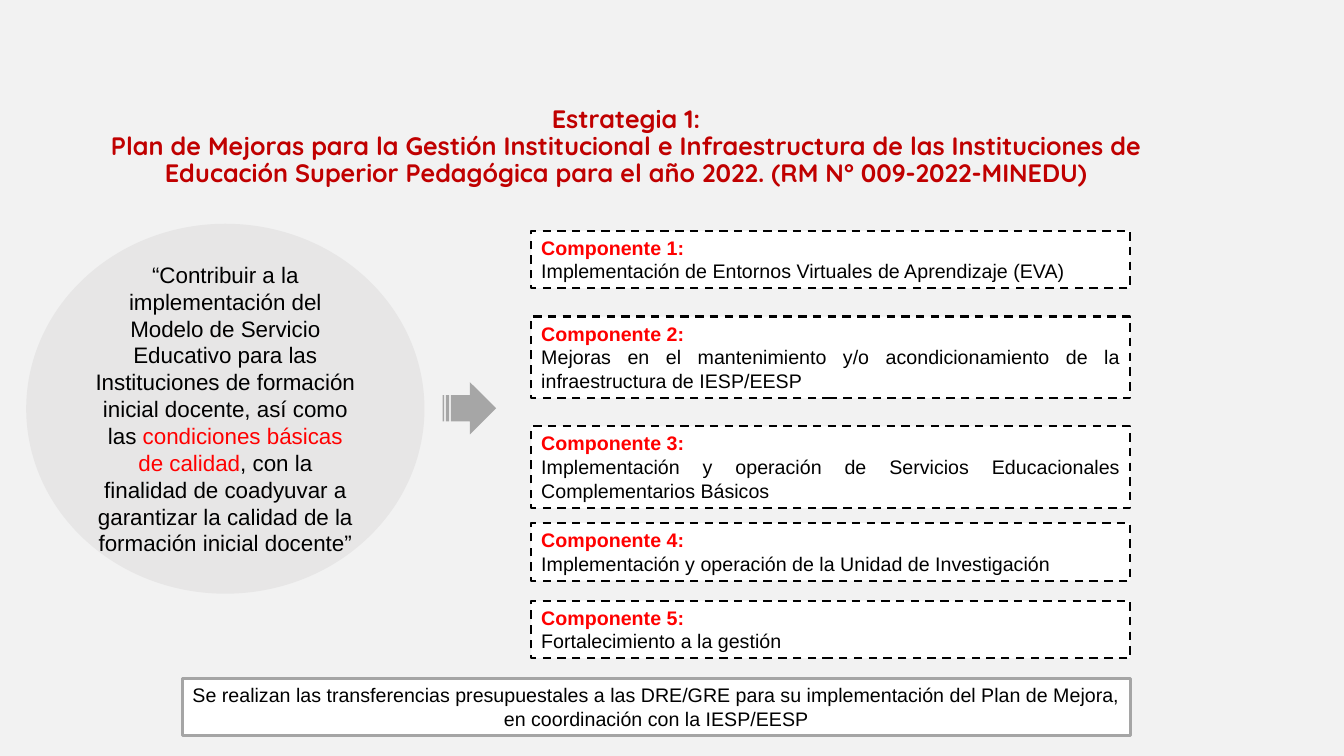
from pptx import Presentation
from pptx.dml.color import RGBColor
from pptx.enum.dml import MSO_LINE_DASH_STYLE as Dash
from pptx.enum.shapes import MSO_SHAPE as Shape
from pptx.enum.text import MSO_ANCHOR as Anchor, PP_ALIGN as Align
from pptx.util import Inches, Pt

# Content
BLACK, RED, DARK_RED, WHITE = "000000", "FF0000", "C00000", "FFFFFF"
TITLE = [
    "Estrategia 1:",
    "Plan de Mejoras para la Gestión Institucional e Infraestructura de las "
    "Instituciones de Educación Superior Pedagógica para el año 2022. "
    "(RM N° 009-2022-MINEDU)",
]
OBJECTIVE = [
    ("“Contribuir a la implementación del Modelo de Servicio Educativo para las "
     "Instituciones de formación inicial docente, así como las ", BLACK),
    ("condiciones básicas de calidad", RED),
    (", con la finalidad de coadyuvar a garantizar la calidad de la formación "
     "inicial docente”", BLACK),
]
# Top, number of text lines, description
COMPONENTS = [
    (2.29, 2, "Implementación de Entornos Virtuales de Aprendizaje (EVA)"),
    (3.14, 3, "Mejoras en el mantenimiento y/o acondicionamiento de la "
              "infraestructura de IESP/EESP"),
    (4.23, 3, "Implementación y operación de Servicios Educacionales "
              "Complementarios Básicos"),
    (5.19, 2, "Implementación y operación de la Unidad de Investigación"),
    (5.96, 2, "Fortalecimiento a la gestión"),
]
FUNDING = ("Se realizan las transferencias presupuestales a las DRE/GRE para su "
           "implementación del Plan de Mejora, en coordinación con la IESP/EESP")

# Layout
COMPONENT_LEFT, COMPONENT_WIDTH = 5.27, 5.94
FUNDING_LEFT = 1.81
LINE_HEIGHT, PADDING = 0.24, 0.09


def color(value):
    return RGBColor.from_string(value)


def box_height(lines):
    return PADDING + lines * LINE_HEIGHT


def add_run(paragraph, text, size, tint, bold=False, font="Arial"):
    run = paragraph.add_run()
    run.text = text
    run.font.name, run.font.size, run.font.bold = font, Pt(size), bold
    run.font.color.rgb = color(tint)


def add_block(kind, place, fill, anchor=Anchor.TOP, line=None, width=0, dash=None):
    block = slide.shapes.add_shape(kind, *map(Inches, place))
    block.shadow.inherit = False
    block.fill.solid()
    block.fill.fore_color.rgb = color(fill)
    if line:
        block.line.color.rgb = color(line)
        block.line.width = Pt(width)
        block.line.dash_style = dash
    else:
        block.line.fill.background()
    block.text_frame.word_wrap = True
    block.text_frame.vertical_anchor = anchor
    return block.text_frame


prs = Presentation()
prs.slide_width, prs.slide_height = Inches(13.33), Inches(7.5)
slide = prs.slides.add_slide(prs.slide_layouts[5])
slide.background.fill.solid()
slide.background.fill.fore_color.rgb = color("F2F2F2")

# Title
title = slide.shapes.title
title.left, title.top = Inches(0.46), Inches(1.12)
title.width, title.height = Inches(11.5), Inches(0.68)
title.text_frame.word_wrap = True
title.text_frame.vertical_anchor = Anchor.MIDDLE
heading = title.text_frame.paragraphs[0]
heading.alignment, heading.line_spacing = Align.CENTER, 0.9
for i, text in enumerate(TITLE):
    if i:
        heading.add_line_break()
    add_run(heading, text, 18, DARK_RED, True, "Quicksand")

# Objective
objective = add_block(Shape.OVAL, (0.26, 2.22, 3.95, 3.67), "E7E6E6",
                      Anchor.MIDDLE).paragraphs[0]
objective.alignment = Align.CENTER
for text, tint in OBJECTIVE:
    add_run(objective, text, 16, tint)

# Components
for number, (top, lines, description) in enumerate(COMPONENTS, 1):
    place = (COMPONENT_LEFT, top, COMPONENT_WIDTH, box_height(lines))
    component = add_block(Shape.RECTANGLE, place, WHITE,
                          line=BLACK, width=1.5, dash=Dash.DASH)
    label, detail = component.paragraphs[0], component.add_paragraph()
    label.alignment = Align.LEFT
    detail.alignment = Align.JUSTIFY
    add_run(label, f"Componente {number}:", 14, RED, True)
    add_run(detail, description, 14, BLACK)

# Arrow from objective to components
add_block(Shape.STRIPED_RIGHT_ARROW, (4.39, 3.79, 0.53, 0.52), "A6A6A6")

# Funding note, ending flush with the components
funding_width = COMPONENT_LEFT + COMPONENT_WIDTH - FUNDING_LEFT
funding = add_block(Shape.RECTANGLE, (FUNDING_LEFT, 6.73, funding_width, box_height(2)),
                    WHITE, line="A5A5A5", width=2).paragraphs[0]
funding.alignment = Align.CENTER
add_run(funding, FUNDING, 14, BLACK)

prs.save("out.pptx")
